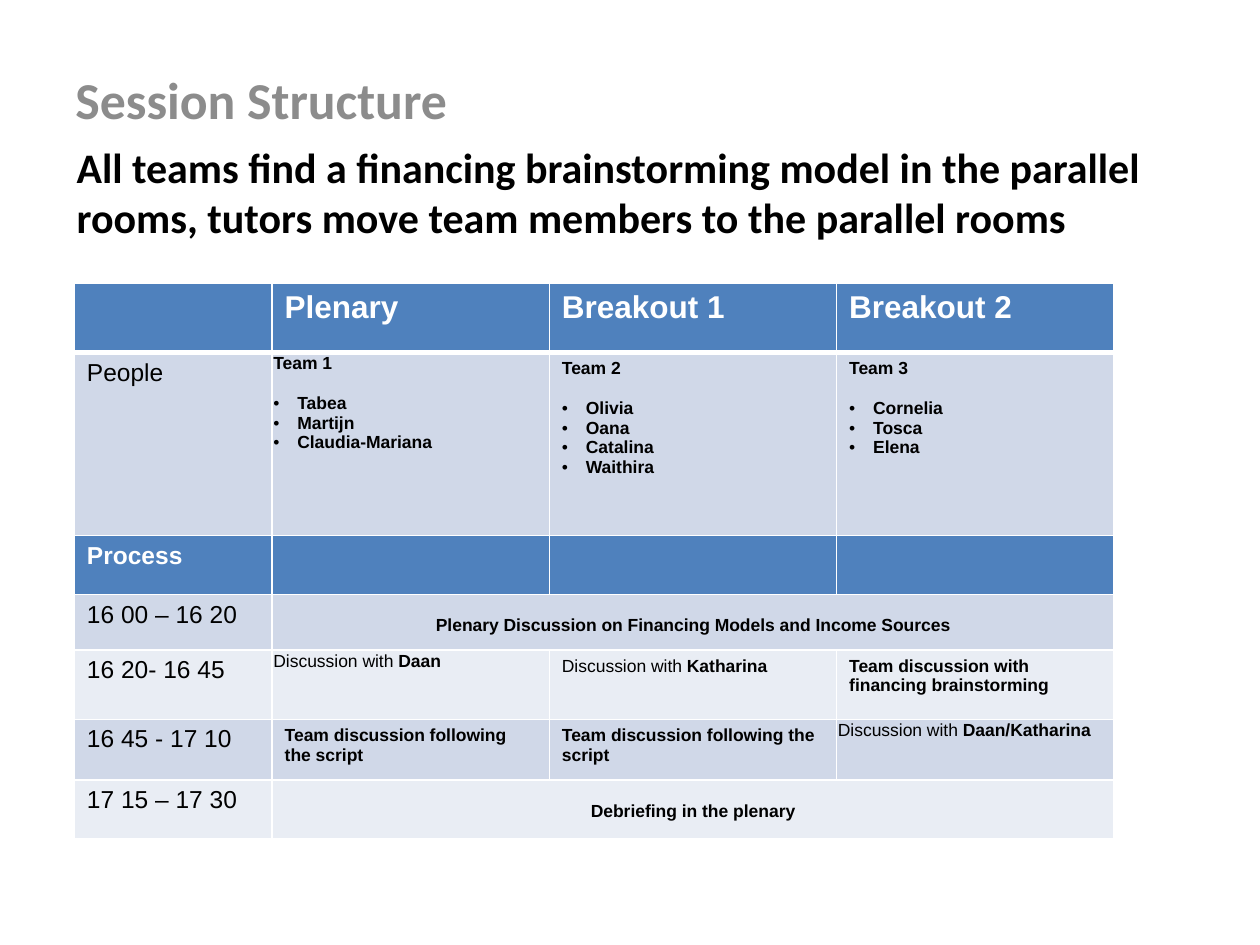
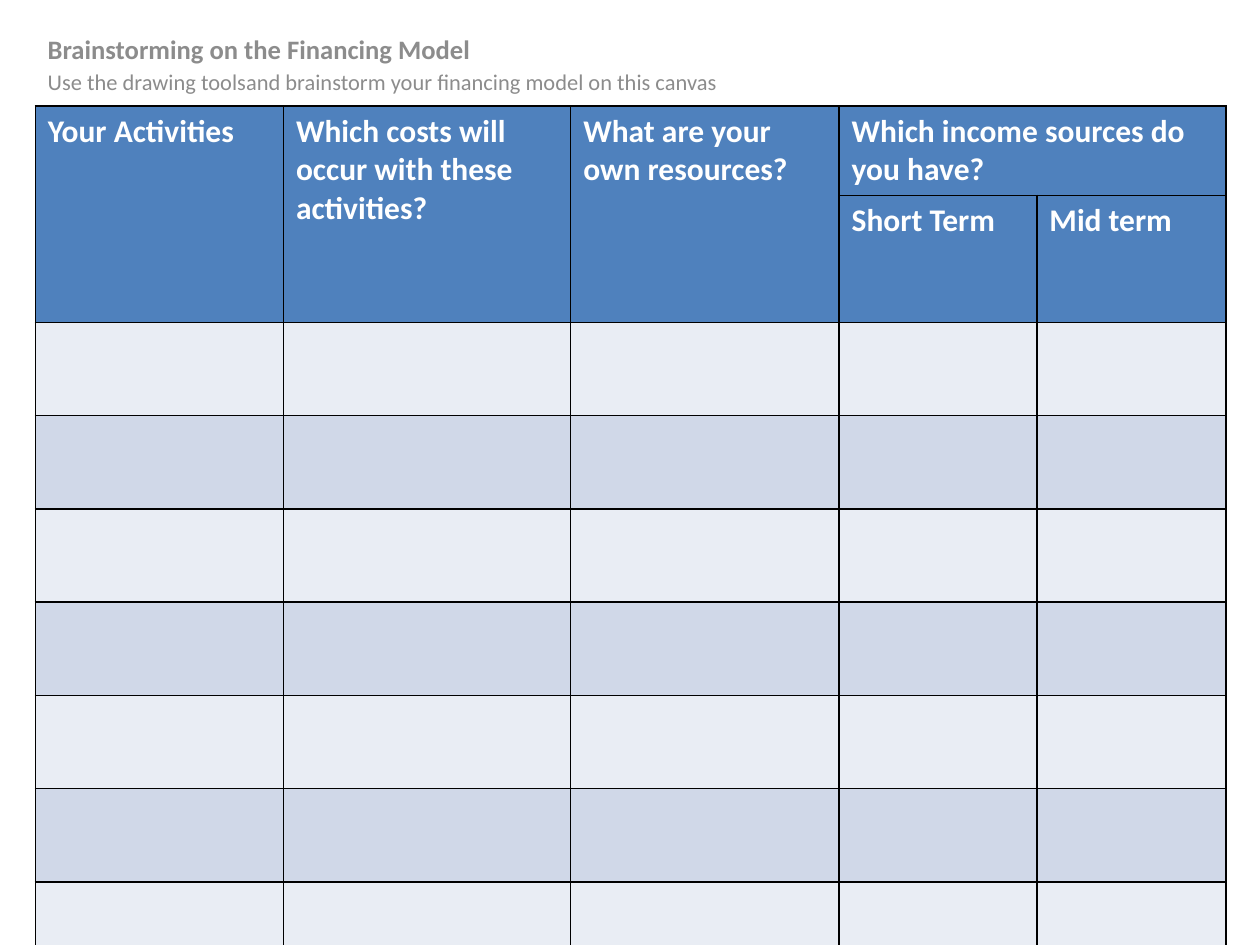
"""Build the session structure and the financing brainstorming slides."""
from lxml.etree import SubElement
from pptx import Presentation
from pptx.dml.color import RGBColor
from pptx.enum.text import PP_ALIGN as Align
from pptx.oxml.ns import qn
from pptx.util import Inches, Pt

HEADER = RGBColor(0x4F, 0x81, 0xBD)
BAND_DARK = RGBColor(0xD0, 0xD8, 0xE8)
BAND_LIGHT = RGBColor(0xE9, 0xED, 0xF4)
TITLE_GREY = RGBColor(0x8C, 0x8C, 0x8C)
BLACK = RGBColor(0, 0, 0)
WHITE = RGBColor(0xFF, 0xFF, 0xFF)
BODY_FONT, TABLE_FONT = "Calibri", "Arial"
SLIDE_SIZE = (10, 7.5)
TITLE_SIZE = (8.59, 0.58)

MESSAGE = ("All teams find a financing brainstorming model in the parallel rooms, "
           "tutors move team members to the parallel rooms")
ROOMS = ["Plenary", "Breakout 1", "Breakout 2"]
TEAMS = {
    "Team 1": ["Tabea", "Martijn", "Claudia-Mariana"],
    "Team 2": ["Olivia", "Oana", "Catalina", "Waithira"],
    "Team 3": ["Cornelia", "Tosca", "Elena"],
}
SCRIPTED = "*Team discussion following the script*"
PROCESS = [
    ("16 00 – 16 20", ["*Plenary Discussion on Financing Models and Income Sources*"]),
    ("16 20- 16 45", ["Discussion with *Daan*", "Discussion with *Katharina*",
                      "*Team discussion with financing brainstorming*"]),
    ("16 45 - 17 10", [SCRIPTED, SCRIPTED, "Discussion with *Daan/Katharina*"]),
    ("17 15 – 17 30", ["*Debriefing in the plenary*"]),
]
TIGHT_CELLS = [(1, 1), (3, 1), (4, 1), (5, 3), (6, 1)]
SESSION_COLUMNS = [1.57, 2.2, 2.28, 2.2]
SESSION_ROWS = [0.55, 1.45, 0.47, 0.44, 0.55, 0.48, 0.47]

CANVAS_TITLE = "Brainstorming on the Financing Model"
CANVAS_HINT = "Use the drawing toolsand brainstorm your financing model on this canvas"
QUESTIONS = ["Your Activities", "Which costs will occur with these activities?",
             "What are your own resources?", "Which income sources do you have?"]
TERMS = ["Short Term", "Mid term"]
CANVAS_COLUMNS = [1.97, 2.28, 2.13, 1.57, 1.5]
CANVAS_ROWS = [0.71, 1.01] + [0.74] * 7


def write(frame, text, size=10, color=BLACK, font=TABLE_FONT, bold=False,
          align=Align.LEFT, before=0, bullet=False, new=False):
    """Write one paragraph; asterisks enclose its bold parts."""
    para = frame.add_paragraph() if new else frame.paragraphs[0]
    para.alignment = align
    para.space_before = Pt(before)
    for index, part in enumerate(text.split("*")):
        if part:
            span = para.add_run()
            span.text = part
            span.font.size, span.font.name = Pt(size), font
            span.font.bold = bold or index % 2 == 1
            span.font.color.rgb = color
    if bullet:
        props = para._p.get_or_add_pPr()
        props.set("marL", str(Inches(0.19)))
        props.set("indent", str(-Inches(0.19)))
        SubElement(props, qn("a:buFont"), typeface="Arial")
        SubElement(props, qn("a:buChar"), char="•")


def add_text(page, left, top, width, height):
    """Add a wrapping text box and return its frame."""
    box = page.shapes.add_textbox(*map(Inches, (left, top, width, height)))
    box.text_frame.word_wrap = True
    return box.text_frame


def set_borders(cell, color, bottom=1):
    """Line all four sides of a cell."""
    props = cell._tc.get_or_add_tcPr()
    for index, side in enumerate("LRTB"):
        width = Pt(bottom if side == "B" else 1)
        line = SubElement(props, qn(f"a:ln{side}"), w=str(width))
        SubElement(SubElement(line, qn("a:solidFill")), qn("a:srgbClr"), val=str(color))
        props.insert(index, line)


def add_grid(page, left, top, columns, rows, fills, border, header_bottom=1):
    """Add a table with one fill per row and lined cells."""
    frame = page.shapes.add_table(len(rows), len(columns), Inches(left), Inches(top),
                                  Inches(sum(columns)), Inches(sum(rows)))
    table = frame.table
    table.first_row = table.horz_banding = False
    for column, width in zip(table.columns, columns):
        column.width = Inches(width)
    for index, (row, height, fill) in enumerate(zip(table.rows, rows, fills)):
        row.height = Inches(height)
        for cell in row.cells:
            cell.fill.solid()
            cell.fill.fore_color.rgb = fill
            set_borders(cell, border, 1 if index else header_bottom)
    return table


def build_session(page):
    """Show the teams and the timetable."""
    write(add_text(page, 0.5, 0.49, *TITLE_SIZE), "Session Structure", size=29.6,
          color=TITLE_GREY, font=BODY_FONT, bold=True, before=2)
    write(add_text(page, 0.51, 1.07, 9.13, 0.91), MESSAGE, size=24, font=BODY_FONT, bold=True)
    fills = [HEADER, BAND_DARK, HEADER] + [BAND_DARK, BAND_LIGHT] * 2
    table = add_grid(page, 0.59, 2.25, SESSION_COLUMNS, SESSION_ROWS, fills, WHITE,
                     header_bottom=3)
    for row, column in TIGHT_CELLS:
        cell = table.cell(row, column)
        cell.margin_left = cell.margin_right = cell.margin_top = Inches(0.01)
        cell.margin_bottom = 0
    for column, (room, (team, members)) in enumerate(zip(ROOMS, TEAMS.items()), 1):
        write(table.cell(0, column).text_frame, room, size=18, color=WHITE, bold=True)
        frame = table.cell(1, column).text_frame
        write(frame, team, bold=True)
        for index, member in enumerate(members):
            write(frame, member, bold=True, bullet=True, new=True, before=0 if index else 11.5)
    write(table.cell(1, 0).text_frame, "People", size=14)
    write(table.cell(2, 0).text_frame, "Process", size=14, color=WHITE, bold=True)
    for row, (time, steps) in enumerate(PROCESS, 3):
        write(table.cell(row, 0).text_frame, time, size=14)
        shared = len(steps) == 1
        if shared:
            table.cell(row, 1).merge(table.cell(row, 3))
            table.cell(row, 1).margin_top = Inches(0.17)
        for column, step in enumerate(steps, 1):
            write(table.cell(row, column).text_frame, step,
                  align=Align.CENTER if shared else Align.LEFT)


def build_canvas(page):
    """Show the empty brainstorming grid."""
    frame = add_text(page, 0.28, 0.21, *TITLE_SIZE)
    write(frame, CANVAS_TITLE, size=15.2, color=TITLE_GREY, font=BODY_FONT, bold=True)
    write(frame, CANVAS_HINT, size=12.8, color=TITLE_GREY, font=BODY_FONT, before=2, new=True)
    fills = [HEADER] * 2 + [BAND_LIGHT, BAND_DARK] * 3 + [BAND_LIGHT]
    table = add_grid(page, 0.28, 0.84, CANVAS_COLUMNS, CANVAS_ROWS, fills, BLACK)
    for column in range(3):
        table.cell(0, column).merge(table.cell(1, column))
    table.cell(0, 3).merge(table.cell(0, 4))
    headings = [(0, column, text) for column, text in enumerate(QUESTIONS)]
    headings += [(1, column, text) for column, text in enumerate(TERMS, 3)]
    for row, column, text in headings:
        write(table.cell(row, column).text_frame, text, size=18, color=WHITE,
              font=BODY_FONT, bold=True)


def main():
    """Build and save the deck."""
    deck = Presentation()
    deck.slide_width, deck.slide_height = map(Inches, SLIDE_SIZE)
    for build in (build_session, build_canvas):
        build(deck.slides.add_slide(deck.slide_layouts[6]))
    deck.save("out.pptx")


if __name__ == "__main__":
    main()
